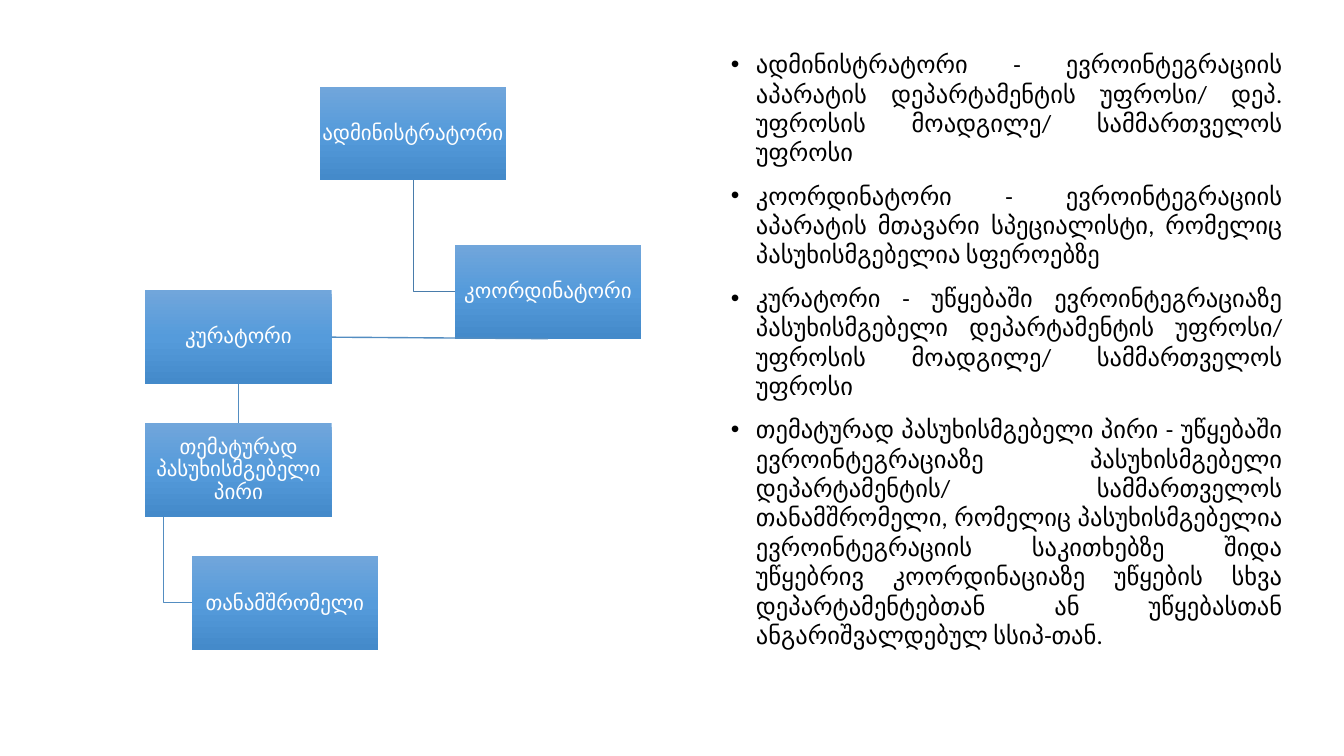
from copy import deepcopy

from lxml import etree
from pptx import Presentation
from pptx.dml.color import RGBColor
from pptx.enum.shapes import MSO_CONNECTOR, MSO_SHAPE
from pptx.enum.text import MSO_ANCHOR, PP_ALIGN
from pptx.oxml.ns import qn
from pptx.util import Pt

# Content: role -> (label, left, top)
ROLES = {
    "administrator": ("ადმინისტრატორი", 317, 86),
    "coordinator": ("კოორდინატორი", 451, 243),
    "curator": ("კურატორი", 144, 288),
    "thematic": ("თემატურად პასუხისმგებელი პირი", 144, 420),
    "employee": ("თანამშრომელი", 190, 552),
}
DUTIES = [
    "ადმინისტრატორი - ევროინტეგრაციის აპარატის დეპარტამენტის უფროსი/ დეპ. "
    "უფროსის მოადგილე/ სამმართველოს უფროსი",
    "კოორდინატორი - ევროინტეგრაციის აპარატის მთავარი სპეციალისტი, რომელიც "
    "პასუხისმგებელია სფეროებზე",
    "კურატორი - უწყებაში ევროინტეგრაციაზე პასუხისმგებელი დეპარტამენტის უფროსი/ "
    "უფროსის მოადგილე/ სამმართველოს უფროსი",
    "თემატურად პასუხისმგებელი პირი - უწყებაში ევროინტეგრაციაზე პასუხისმგებელი "
    "დეპარტამენტის/ სამმართველოს თანამშრომელი, რომელიც პასუხისმგებელია "
    "ევროინტეგრაციის საკითხებზე შიდა უწყებრივ კოორდინაციაზე უწყების სხვა "
    "დეპარტამენტებთან ან უწყებასთან ანგარიშვალდებულ სსიპ-თან.",
]

WHITE = RGBColor(0xFF, 0xFF, 0xFF)
BLACK = RGBColor(0x00, 0x00, 0x00)
UPPER_LINE = RGBColor(0x49, 0x7C, 0xAB)
LOWER_LINE = RGBColor(0x53, 0x8D, 0xC1)
GRADIENT = [
    (0, RGBColor(0x71, 0xA6, 0xDB)),
    (0.5, RGBColor(0x55, 0x9B, 0xDB)),
    (1, RGBColor(0x44, 0x8A, 0xCA)),
]

# (upper role, lower role, distance of the drop from the upper box's left, colour)
ELBOWS = [
    ("administrator", "coordinator", 93, UPPER_LINE),
    ("thematic", "employee", 18, LOWER_LINE),
]
# (from role, side, to role, side)
BOTTOM, RIGHT, TOP = 2, 3, 0
STRAIGHTS = [
    ("coordinator", BOTTOM, "curator", RIGHT),
    ("curator", BOTTOM, "thematic", TOP),
]

SCALE = 9144  # EMU in one px, 100 px to the inch
BOX_WIDTH, BOX_HEIGHT = 185, 93
RECTANGLE = MSO_SHAPE.RECTANGLE
STRAIGHT = MSO_CONNECTOR.STRAIGHT
MIDDLE, CENTER, JUSTIFY = MSO_ANCHOR.MIDDLE, PP_ALIGN.CENTER, PP_ALIGN.JUSTIFY
LABEL_FONT = {"name": "Calibri", "size": Pt(15)}
DUTY_FONT = {"name": "Calibri", "size": Pt(17.5)}


def px(*lengths):
    return [length * SCALE for length in lengths]


def set_values(target, values):
    for name, value in values.items():
        setattr(target, name, value)


def add_span(para, text, font, color):
    span = para.add_run()
    span.text = text
    set_values(span.font, font)
    span.font.color.rgb = color


def style_line(line, color):
    line.color.rgb = color
    line.width = Pt(1)


def fill_gradient(box):
    """Fill from top to bottom with the three GRADIENT stops."""
    box.fill.gradient()
    box.fill.gradient_angle = 270
    stop_list = next(box.element.iter(qn("a:gsLst")))
    stop_list.insert(1, deepcopy(stop_list[0]))
    for stop, (position, color) in zip(box.fill.gradient_stops, GRADIENT):
        stop.position = position
        stop.color.rgb = color


def add_role(page, label, left, top):
    box = page.shapes.add_shape(RECTANGLE, *px(left, top, BOX_WIDTH, BOX_HEIGHT))
    box.shadow.inherit = False
    fill_gradient(box)
    box.line.fill.background()
    frame = box.text_frame
    margins = dict.fromkeys(
        ["margin_left", "margin_top", "margin_right", "margin_bottom"], SCALE)
    set_values(frame, {"word_wrap": True, "vertical_anchor": MIDDLE, **margins})
    para = frame.paragraphs[0]
    set_values(para, {"alignment": CENTER, "line_spacing": 0.9})
    add_span(para, label, LABEL_FONT, WHITE)
    return box


def add_elbow(page, upper, lower, drop, color):
    _, upper_left, upper_top = ROLES[upper]
    _, lower_left, lower_top = ROLES[lower]
    x, start = upper_left + drop, upper_top + BOX_HEIGHT
    turn = lower_top + BOX_HEIGHT // 2
    builder = page.shapes.build_freeform(x, start, scale=SCALE)
    builder.add_line_segments([(x, turn), (lower_left, turn)], close=False)
    elbow = builder.convert_to_shape()
    elbow.shadow.inherit = False
    elbow.fill.background()
    style_line(elbow.line, color)


def add_straight(page, first, first_side, second, second_side):
    line = page.shapes.add_connector(STRAIGHT, 0, 0, 0, 0)
    line.begin_connect(first, first_side)
    line.end_connect(second, second_side)
    style_line(line.line, LOWER_LINE)
    etree.SubElement(line.element.spPr, qn("a:effectLst"))


def add_duties(page):
    frame = page.shapes.add_textbox(*px(715, 44, 567, 626)).text_frame
    frame.word_wrap = True
    for index, duty in enumerate(DUTIES):
        para = frame.add_paragraph() if index else frame.paragraphs[0]
        set_values(para, {"alignment": JUSTIFY, "space_before": Pt(10)})
        add_span(para, duty, DUTY_FONT, BLACK)
        properties = para._p.get_or_add_pPr()
        properties.set("marL", str(25 * SCALE))
        properties.set("indent", str(-25 * SCALE))
        etree.SubElement(properties, qn("a:buFont"), typeface="Arial")
        etree.SubElement(properties, qn("a:buChar"), char="•")


def main():
    deck = Presentation()
    deck.slide_width, deck.slide_height = px(1333, 750)
    page = deck.slides.add_slide(deck.slide_layouts[6])
    for elbow in ELBOWS:
        add_elbow(page, *elbow)
    boxes = {role: add_role(page, *values) for role, values in ROLES.items()}
    for first, first_side, second, second_side in STRAIGHTS:
        add_straight(page, boxes[first], first_side, boxes[second], second_side)
    add_duties(page)
    deck.save("out.pptx")


if __name__ == "__main__":
    main()
